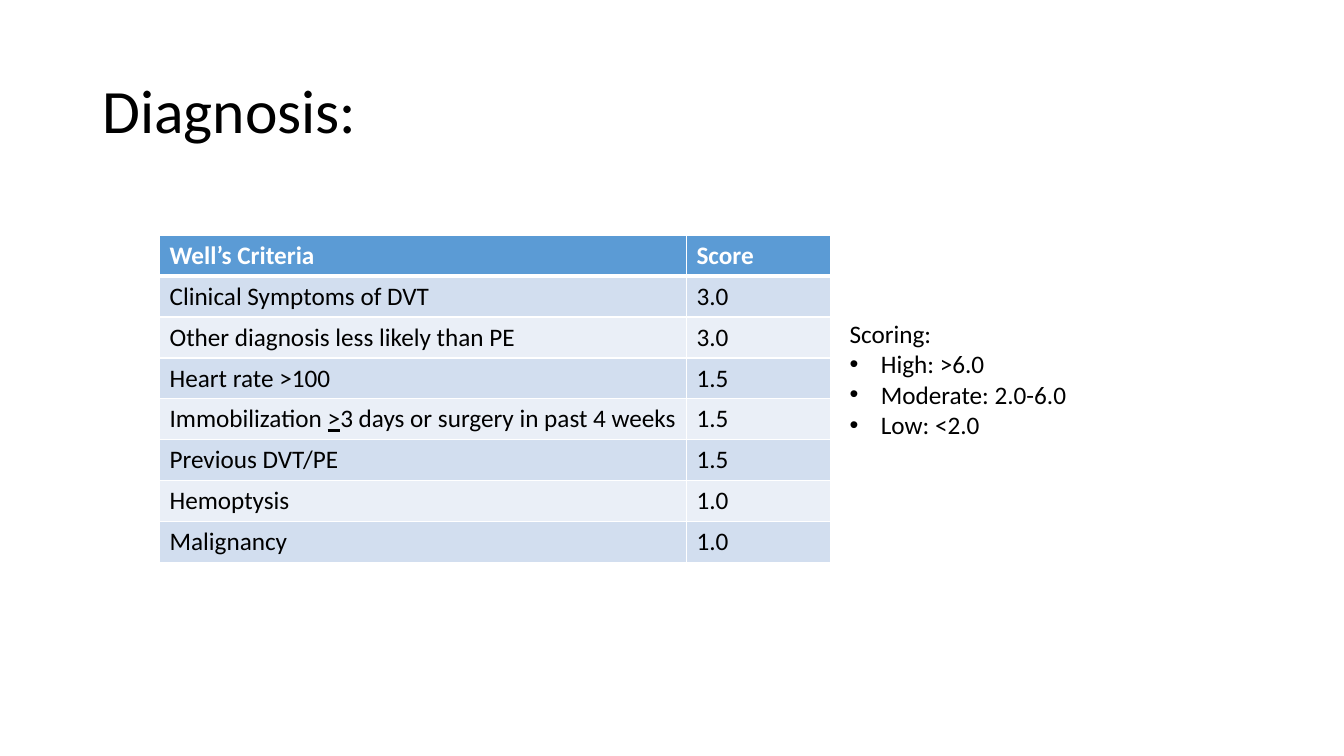
from dataclasses import dataclass

from lxml import etree
from pptx import Presentation
from pptx.dml.color import RGBColor
from pptx.enum.text import MSO_ANCHOR
from pptx.oxml.ns import qn
from pptx.util import Cm, Pt

TOP, MIDDLE = MSO_ANCHOR.TOP, MSO_ANCHOR.MIDDLE
FONT = "Calibri"
BLACK, WHITE = "000000", "FFFFFF"
BLUE, BANDS = "5B9BD5", ("D2DEEF", "EAEFF7")
WIDTHS, HEIGHT = (13.28, 3.63), 1.03
INDENT = Cm(0.79)


@dataclass
class Row:
    label: str
    score: str


@dataclass
class Line:
    text: str
    bullet: bool = False


# Underscores enclose underlined text
HEAD = Row("Well’s Criteria", "Score")
ROWS = [
    Row("Clinical Symptoms of DVT", "3.0"),
    Row("Other diagnosis less likely than PE", "3.0"),
    Row("Heart rate >100", "1.5"),
    Row("Immobilization _>_3 days or surgery in past 4 weeks", "1.5"),
    Row("Previous DVT/PE", "1.5"),
    Row("Hemoptysis", "1.0"),
    Row("Malignancy", "1.0"),
]
SCORING = [
    Line("Scoring:"),
    Line("High: >6.0", True),
    Line("Moderate: 2.0-6.0", True),
    Line("Low: <2.0", True),
]


def color(code: str) -> RGBColor:
    return RGBColor.from_string(code)


def write(para, text: str, size: int = 18, ink: str = BLACK,
          bold: bool = False, bullet: bool = False) -> None:
    for index, part in enumerate(text.split("_")):
        run = para.add_run()
        run.text = part
        font = run.font
        font.name, font.size, font.bold = FONT, Pt(size), bold
        font.underline = index % 2 == 1
        font.color.rgb = color(ink)
    if bullet:
        props = para._p.get_or_add_pPr()
        props.set("marL", str(INDENT))
        props.set("indent", str(-INDENT))
        etree.SubElement(props, qn("a:buFont"), typeface="Arial")
        etree.SubElement(props, qn("a:buChar"), char="•")


def add_box(slide, left: float, top: float, width: float, height: float,
            anchor=TOP):
    box = slide.shapes.add_textbox(Cm(left), Cm(top), Cm(width), Cm(height))
    frame = box.text_frame
    frame.word_wrap = True
    frame.vertical_anchor = anchor
    return frame


def add_edges(cell, above: int, below: int) -> None:
    props = cell._tc.get_or_add_tcPr()
    sides = {"lnL": 1, "lnR": 1, "lnT": above, "lnB": below}
    for side, points in sides.items():
        line = etree.SubElement(props, qn(f"a:{side}"), w=str(Pt(points)))
        fill = etree.SubElement(line, qn("a:solidFill"))
        etree.SubElement(fill, qn("a:srgbClr"), val=WHITE)


def add_grid(slide, left: float, top: float) -> None:
    rows = [HEAD, *ROWS]
    table = slide.shapes.add_table(
        len(rows), len(WIDTHS), Cm(left), Cm(top),
        Cm(sum(WIDTHS)), Cm(HEIGHT * len(rows))).table
    for col, width in zip(table.columns, WIDTHS):
        col.width = Cm(width)
    for r, row in enumerate(rows):
        table.rows[r].height = Cm(HEIGHT)
        head = r == 0
        for c, text in enumerate((row.label, row.score)):
            cell = table.cell(r, c)
            add_edges(cell, 3 if r == 1 else 1, 3 if head else 1)
            cell.fill.solid()
            cell.fill.fore_color.rgb = color(BLUE if head else BANDS[(r - 1) % 2])
            write(cell.text_frame.paragraphs[0], text,
                  ink=WHITE if head else BLACK, bold=head)


def main() -> None:
    deck = Presentation()
    deck.slide_width, deck.slide_height = Cm(33.87), Cm(19.05)
    slide = deck.slides.add_slide(deck.slide_layouts[6])

    # Title
    title = add_box(slide, 2.33, 1.01, 29.21, 3.68, MIDDLE).paragraphs[0]
    title.line_spacing = 0.9
    write(title, "Diagnosis:", size=44)

    # Criteria table
    add_grid(slide, 4.02, 5.93)

    # Scoring key
    frame = add_box(slide, 21.16, 7.9, 6.78, 3.33)
    for index, line in enumerate(SCORING):
        para = frame.add_paragraph() if index else frame.paragraphs[0]
        write(para, line.text, bullet=line.bullet)

    deck.save("out.pptx")


if __name__ == "__main__":
    main()
